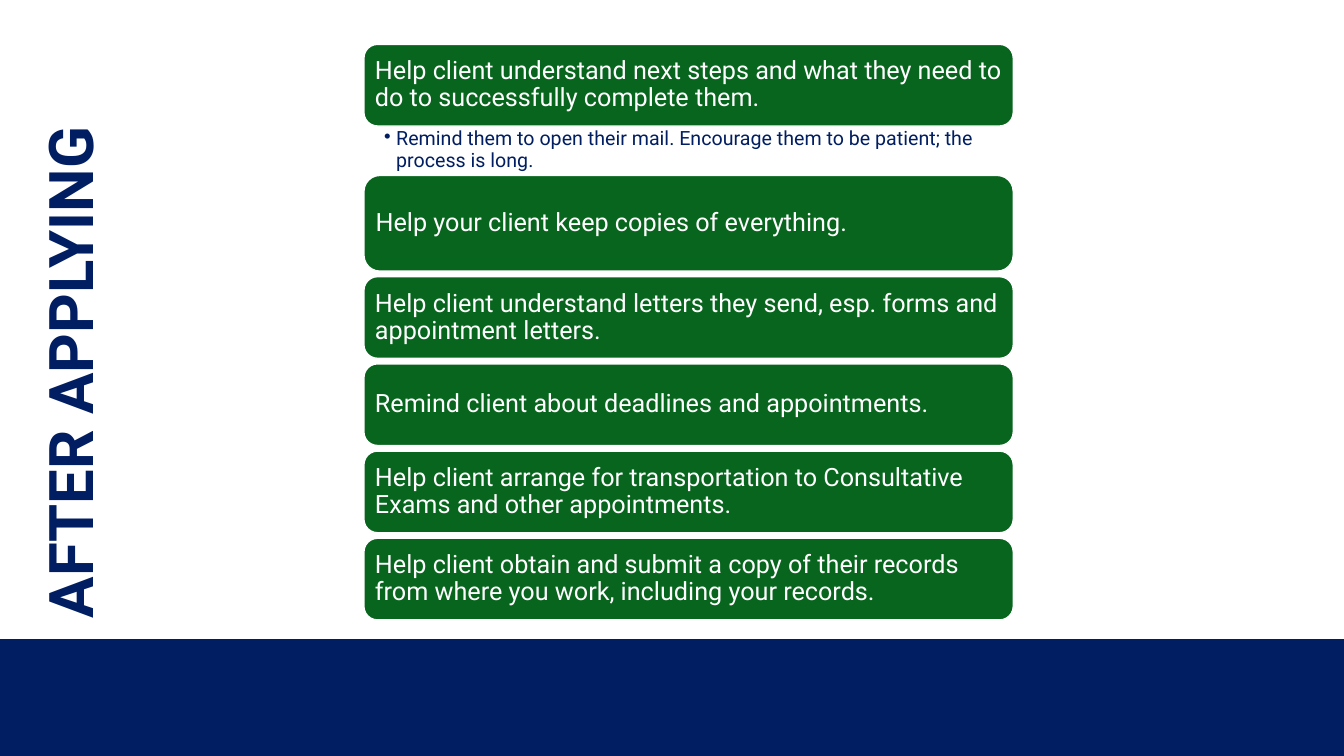
import pptx
import pptx.dml.color
import pptx.enum.shapes
import pptx.enum.text
import pptx.oxml.ns
import pptx.util
from lxml import etree
from dataclasses import dataclass

Inches = pptx.util.Inches
Pt = pptx.util.Pt
SHAPES = pptx.enum.shapes.MSO_SHAPE
ANCHOR = pptx.enum.text.MSO_ANCHOR


@dataclass(frozen=True)
class Theme:
    font: str = "Roboto"
    navy: str = "001E61"
    green: str = "07651D"
    white: str = "FFFFFF"
    title_size: int = 44
    step_size: int = 18
    note_size: int = 14


THEME = Theme()

FIRST_STEP = "Help client understand next steps and what they need to do to successfully complete them."
REMINDER = "Remind them to open their mail. Encourage them to be patient; the process is long."
# Remaining steps with their heights
LATER_STEPS = [
    ("Help your client keep copies of everything.", 0.95),
    ("Help client understand letters they send, esp. forms and appointment letters.", 0.81),
    ("Remind client about deadlines and appointments.", 0.81),
    ("Help client arrange for transportation to Consultative Exams and other appointments.", 0.81),
    ("Help client obtain and submit a copy of their records from where you work, including your records.", 0.81),
]
STEP_LEFT, STEP_WIDTH = 3.61, 6.44
FIRST_TOP, FIRST_HEIGHT = 0.44, 0.81
LATER_TOP, STACK_BOTTOM = 1.74, 6.15


def rgb(color):
    return pptx.dml.color.RGBColor.from_string(color)


def apply_format(target, values):
    for name, value in values.items():
        setattr(target, name, value)


def write_text(frame, text, size, color, insets, anchor, bold=False, bullet_indent=None):
    sides = ("margin_left", "margin_top", "margin_right", "margin_bottom")
    apply_format(frame, dict(zip(sides, map(Inches, insets))))
    apply_format(frame, {"word_wrap": True, "vertical_anchor": anchor})
    paragraph = frame.paragraphs[0]
    paragraph.text = text
    if bullet_indent is not None:
        properties = paragraph._p.get_or_add_pPr()
        properties.set("marL", str(Inches(bullet_indent)))
        properties.set("indent", str(-Inches(bullet_indent)))
        etree.SubElement(properties, pptx.oxml.ns.qn("a:buChar"), char="•")
        paragraph.level = 1
    apply_format(paragraph, {"line_spacing": 0.9, "alignment": pptx.enum.text.PP_ALIGN.LEFT})
    apply_format(paragraph.font, {"name": THEME.font, "size": Pt(size), "bold": bold})
    paragraph.font.color.rgb = rgb(color)


def add_block(slide, kind, box, fill):
    block = slide.shapes.add_shape(kind, *map(Inches, box))
    block.shadow.inherit = False
    block.fill.solid()
    block.fill.fore_color.rgb = rgb(fill)
    return block


def add_footer_band(slide):
    band = add_block(slide, SHAPES.RECTANGLE, (0, 6.34, 13.33, 1.16), THEME.navy)
    band.line.fill.background()


def add_title(slide):
    title = slide.shapes.add_textbox(*map(Inches, (-2.19, 2.59, 5.83, 1.45)))
    title.rotation = 270
    write_text(title.text_frame, "AFTER APPLYING", THEME.title_size, THEME.navy,
               (0.1, 0.05, 0.1, 0.05), ANCHOR.MIDDLE, bold=True)


def add_step(slide, text, top, height):
    step = add_block(slide, SHAPES.ROUNDED_RECTANGLE,
                     (STEP_LEFT, top, STEP_WIDTH, height), THEME.green)
    step.line.color.rgb = rgb(THEME.white)
    step.line.width = Pt(1)
    write_text(step.text_frame, text, THEME.step_size, THEME.white, (0.07,) * 4, ANCHOR.MIDDLE)


def add_reminder(slide):
    top = FIRST_TOP + FIRST_HEIGHT
    reminder = slide.shapes.add_textbox(
        *map(Inches, (STEP_LEFT, top, STEP_WIDTH, LATER_TOP - top)))
    write_text(reminder.text_frame, REMINDER, THEME.note_size, THEME.navy,
               (0.2, 0.03, 0.14, 0.03), ANCHOR.TOP, bullet_indent=0.12)


def main():
    deck = pptx.Presentation()
    apply_format(deck, {"slide_width": Inches(13.33), "slide_height": Inches(7.5)})
    slide = deck.slides.add_slide(deck.slide_layouts[6])

    # Frame of the slide
    add_footer_band(slide)
    add_title(slide)

    # First step and its reminder
    add_step(slide, FIRST_STEP, FIRST_TOP, FIRST_HEIGHT)
    add_reminder(slide)

    # Remaining steps, spread evenly down to the bottom of the stack
    filled = sum(height for _, height in LATER_STEPS)
    gap = (STACK_BOTTOM - LATER_TOP - filled) / (len(LATER_STEPS) - 1)
    top = LATER_TOP
    for text, height in LATER_STEPS:
        add_step(slide, text, top, height)
        top += height + gap

    deck.save("out.pptx")


if __name__ == "__main__":
    main()
